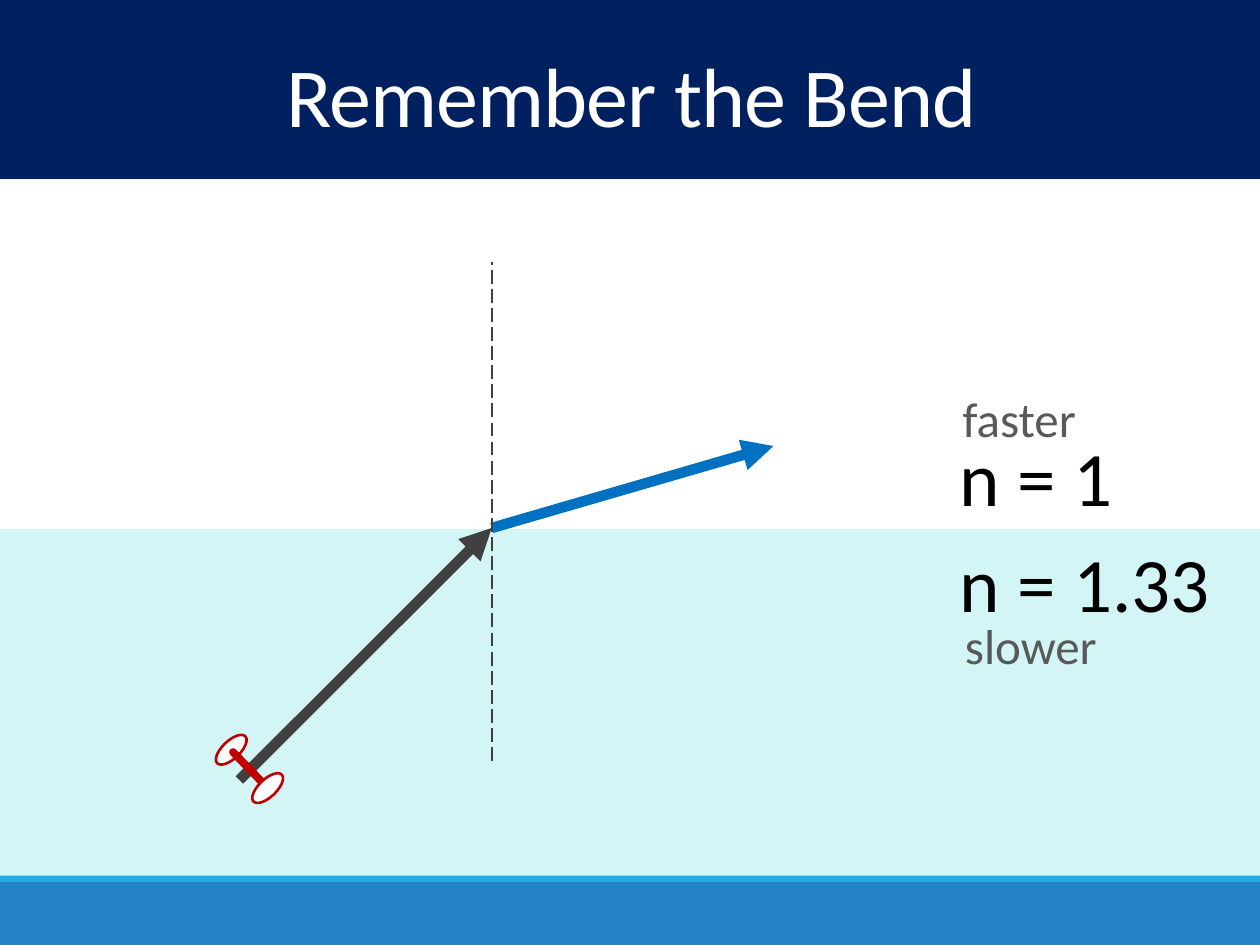
"""Builds a slide on how light bends as it leaves water for air."""
import lxml.etree
import pptx
import pptx.dml.color
import pptx.enum.dml
import pptx.enum.shapes
import pptx.enum.text
import pptx.oxml.ns
import pptx.util

Pt = pptx.util.Pt
RGBColor = pptx.dml.color.RGBColor
NAVY = RGBColor(0x00, 0x20, 0x60)
WHITE = RGBColor(0xFF, 0xFF, 0xFF)
BLACK = RGBColor(0x00, 0x00, 0x00)
WATER = RGBColor(0xD3, 0xF5, 0xF6)
FOOTER = RGBColor(0x26, 0x83, 0xC6)
FOOTER_EDGE = RGBColor(0x1C, 0xAD, 0xE4)
RAY_BLUE = RGBColor(0x00, 0x70, 0xC0)
RAY_GRAY = RGBColor(0x40, 0x40, 0x40)
LABEL_GRAY = RGBColor(0x59, 0x59, 0x59)
RED = RGBColor(0xC0, 0x00, 0x00)
SLIDE_WIDTH, SLIDE_HEIGHT = 720, 540


def add_child(parent, tag, **attributes):
    return lxml.etree.SubElement(parent, pptx.oxml.ns.qn(tag), **attributes)


def add_filled(shapes, kind, left, top, width, height, fill, line=None):
    shape = shapes.add_shape(kind, Pt(left), Pt(top), Pt(width), Pt(height))
    shape.shadow.inherit = False
    shape.fill.solid()
    shape.fill.fore_color.rgb = fill
    if line is None:
        shape.line.fill.background()
    else:
        shape.line.color.rgb = line
        shape.line.width = Pt(1.5)
    return shape


def add_band(page, top, height, color):
    kind = pptx.enum.shapes.MSO_SHAPE.RECTANGLE
    add_filled(page.shapes, kind, 0, top, SLIDE_WIDTH, height, color)


def add_line(shapes, start, end, color, width, arrow=False, dash=None, cap="flat"):
    straight = pptx.enum.shapes.MSO_CONNECTOR.STRAIGHT
    line = shapes.add_connector(straight, *(Pt(value) for value in start + end))
    line.line.color.rgb = color
    line.line.width = Pt(width)
    if dash is not None:
        line.line.dash_style = dash
    outline = line.line._get_or_add_ln()
    outline.set("cap", cap)
    if arrow:
        add_child(outline, "a:tailEnd", type="triangle")
    add_child(line._element.spPr, "a:effectLst")


def add_text(page, text, left, top, width, height, size, color,
             wrap=False, align=None, anchor=pptx.enum.text.MSO_ANCHOR.TOP,
             line_spacing=None, tracking=None):
    box = page.shapes.add_textbox(Pt(left), Pt(top), Pt(width), Pt(height))
    frame = box.text_frame
    frame.word_wrap = wrap
    if not wrap:
        frame.auto_size = pptx.enum.text.MSO_AUTO_SIZE.SHAPE_TO_FIT_TEXT
    frame.vertical_anchor = anchor
    para = frame.paragraphs[0]
    para.alignment = align
    para.line_spacing = line_spacing
    span = para.add_run()
    span.text = text
    span.font.name = "Calibri"
    span.font.size = Pt(size)
    span.font.color.rgb = color
    if tracking is not None:
        span.font._element.set("spc", str(int(tracking * 100)))


def add_wheel(shapes, left, top):
    kind = pptx.enum.shapes.MSO_SHAPE.OVAL
    wheel = add_filled(shapes, kind, left, top, 22.3, 10.1, WHITE, RED)
    wheel.rotation = 316.4


def add_wheel_pair(page):
    shapes = page.shapes.add_group_shape().shapes
    add_wheel(shapes, 121, 423.4)
    add_line(shapes, (133.2, 429.8), (153.4, 450.7), RED, 4.5, cap="rnd")
    add_wheel(shapes, 141.8, 445.3)


def main():
    deck = pptx.Presentation()
    deck.slide_width, deck.slide_height = Pt(SLIDE_WIDTH), Pt(SLIDE_HEIGHT)
    page = deck.slides.add_slide(deck.slide_layouts[6])

    add_band(page, 504, 36, FOOTER)
    add_band(page, 499, 5, FOOTER_EDGE)
    add_band(page, 0, 102.3, NAVY)
    add_text(page, "Remember the Bend", 2, 28, 718, 60.5, 48, WHITE, wrap=True,
             align=pptx.enum.text.PP_ALIGN.CENTER,
             anchor=pptx.enum.text.MSO_ANCHOR.MIDDLE,
             line_spacing=0.85, tracking=-0.5)
    add_band(page, 302.4, 198, WATER)

    surface_point = (281, 301.7)
    add_line(page.shapes, surface_point, (442, 254.9), RAY_BLUE, 6, arrow=True)
    add_line(page.shapes, (281, 434.9), (281, 149.8), RAY_GRAY, 1,
             dash=pptx.enum.dml.MSO_LINE.LONG_DASH)
    add_text(page, "n = 1", 541.5, 242, 102, 60.5, 44, BLACK)
    add_text(page, "n = 1.33", 541.5, 302.4, 158.4, 60.5, 44, BLACK)
    add_line(page.shapes, (136.8, 445.7), surface_point, RAY_GRAY, 6, arrow=True)
    add_wheel_pair(page)
    add_text(page, "faster", 543, 218.6, 80, 41, 28, LABEL_GRAY)
    add_text(page, "slower", 544.3, 348, 92, 41, 28, LABEL_GRAY)

    deck.save("out.pptx")


if __name__ == "__main__":
    main()
